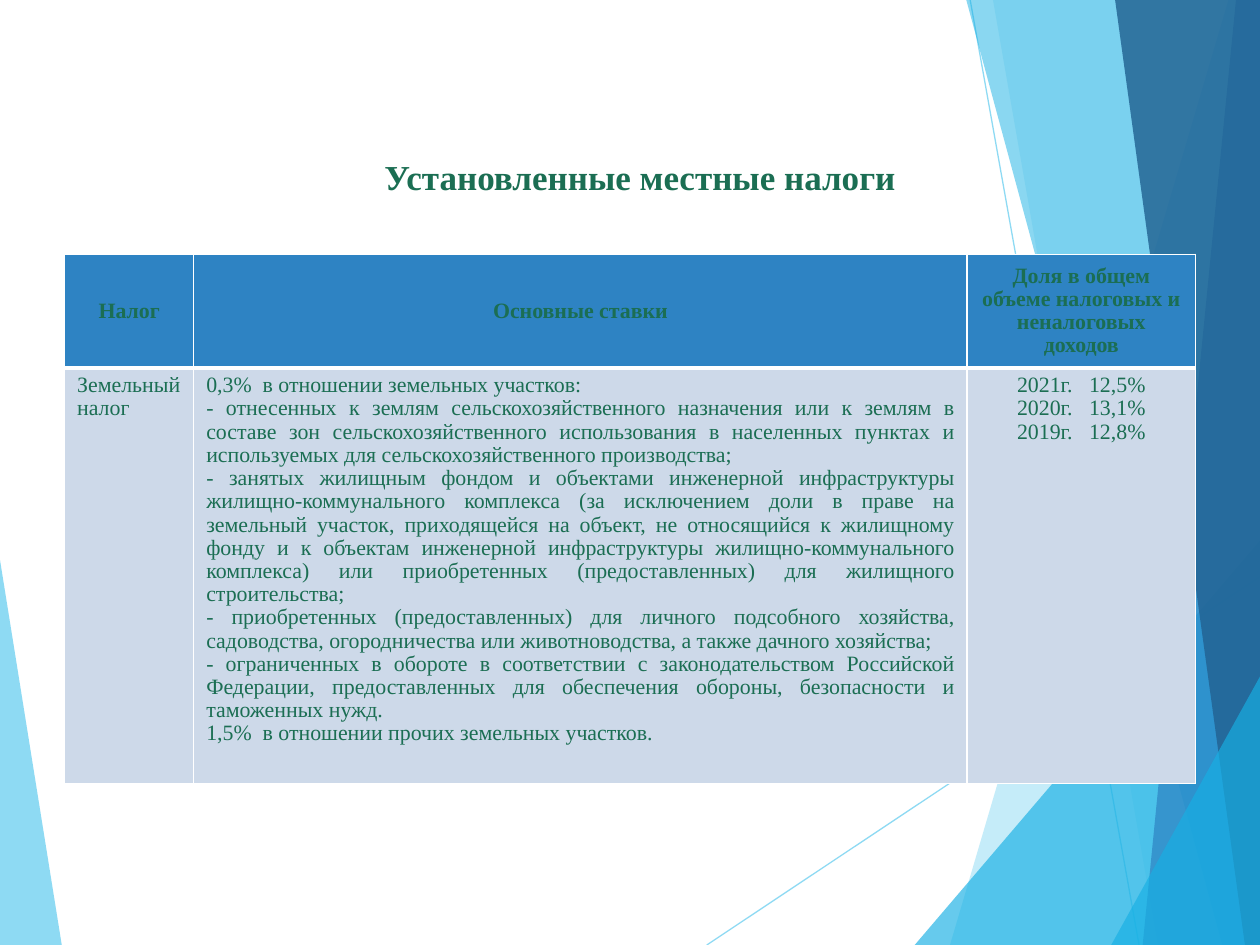
from lxml import etree
from pptx import Presentation
from pptx.dml.color import RGBColor
from pptx.enum import shapes, text
from pptx.oxml import ns
from pptx.util import Pt

COLORS = {
    "sky": "5FCBEF", "cyan": "17B0E4", "blue": "2E83C3", "navy": "226292",
    "green": "1B6E53", "pale": "CDD9E9", "white": "FFFFFF",
}
FONT = "Times New Roman"
WIDTH, HEIGHT = 720, 540

# Each facet: colour, opacity in percent, corner points
LEFT_FACETS = [("sky", 70, [(0, 320), (35.3, 540), (0, 540)])]
RIGHT_FACETS = [
    ("sky", 36, [(702, 0), (542.9, 540), (720, 540), (720, 0)]),
    ("sky", 20, [(567.4, 0), (661.7, 540), (720, 540), (720, 0)]),
    ("cyan", 66, [(522.7, 540), (720, 308.9), (720, 540)]),
    ("cyan", 50, [(552.2, 0), (698.4, 540), (720, 540), (720, 0)]),
    ("blue", 70, [(706.3, 0), (653, 540), (720, 540), (720, 0)]),
    ("navy", 82, [(637.2, 0), (711.4, 540), (720, 540), (720, 0)]),
    ("cyan", 66, [(635, 540), (720, 386.6), (720, 540)]),
]
RAYS = [((403.9, 540), (720, 329.5)), ((554.4, 0), (650.9, 540))]

HEADERS = ["Налог", "Основные ставки",
           "Доля в общем объеме налоговых и неналоговых доходов"]
RATES = [
    "0,3%  в отношении земельных участков:",
    "- отнесенных к землям сельскохозяйственного назначения или к землям в составе зон "
    "сельскохозяйственного использования в населенных пунктах и используемых для "
    "сельскохозяйственного производства;",
    "- занятых жилищным фондом и объектами инженерной инфраструктуры жилищно-коммунального "
    "комплекса (за исключением доли в праве на земельный участок, приходящейся на объект, "
    "не относящийся к жилищному фонду и к объектам инженерной инфраструктуры "
    "жилищно-коммунального комплекса) или приобретенных (предоставленных) для жилищного "
    "строительства;",
    "- приобретенных (предоставленных) для личного подсобного хозяйства, садоводства, "
    "огородничества или животноводства, а также дачного хозяйства;",
    "- ограниченных в обороте в соответствии с законодательством Российской Федерации, "
    "предоставленных для обеспечения обороны, безопасности и таможенных нужд.",
    "1,5%  в отношении прочих земельных участков.",
]
SHARES = ["2021г.   12,5%", "2020г.   13,1%", "2019г.   12,8%"]


def rgb(name):
    return RGBColor.from_string(COLORS[name])


def set_opacity(fill_parent, percent):
    color = fill_parent.find(".//" + ns.qn("a:srgbClr"))
    etree.SubElement(color, ns.qn("a:alpha"), val=str(percent * 1000))


def add_facets(slide, facets):
    for color, opacity, corners in facets:
        points = [(Pt(x), Pt(y)) for x, y in corners]
        builder = slide.shapes.build_freeform(*points[0], scale=1.0)
        builder.add_line_segments(points[1:], close=True)
        facet = builder.convert_to_shape()
        facet.shadow.inherit = False
        facet.line.fill.background()
        facet.fill.solid()
        facet.fill.fore_color.rgb = rgb(color)
        set_opacity(facet._element.spPr, opacity)


def add_rays(slide, rays):
    for start, end in rays:
        ray = slide.shapes.add_connector(
            shapes.MSO_CONNECTOR.STRAIGHT, *(Pt(v) for v in start + end))
        ray.line.width = Pt(0.75)
        ray.line.color.rgb = rgb("sky")
        properties = ray._element.spPr
        set_opacity(properties, 70)
        etree.SubElement(properties, ns.qn("a:effectLst"))


def write(frame, lines, aligns, size, bold=False, spacing=1.0):
    """Fill a text frame with one paragraph per line."""
    for index, (line, align) in enumerate(zip(lines, aligns)):
        paragraph = frame.add_paragraph() if index else frame.paragraphs[0]
        paragraph.alignment = align
        paragraph.line_spacing = spacing
        run = paragraph.add_run()
        run.text = line
        run.font.color.rgb = rgb("green")
        for key, value in {"name": FONT, "size": Pt(size), "bold": bold}.items():
            setattr(run.font, key, value)


def add_title(slide, left, top, width, height):
    frame = slide.shapes.add_textbox(*(Pt(v) for v in (left, top, width, height))).text_frame
    settings = {"word_wrap": True, "margin_top": Pt(6),
                "vertical_anchor": text.MSO_ANCHOR.TOP}
    for key, value in settings.items():
        setattr(frame, key, value)
    write(frame, ["Установленные местные налоги"], [text.PP_ALIGN.CENTER], 20, bold=True)


def set_borders(cell, widths):
    properties = cell._tc.get_or_add_tcPr()
    for position, (side, width) in enumerate(widths.items()):
        border = etree.Element(ns.qn(f"a:ln{side}"), w=str(Pt(width)))
        fill = etree.SubElement(border, ns.qn("a:solidFill"))
        etree.SubElement(fill, ns.qn("a:srgbClr"), val=COLORS["white"])
        properties.insert(position, border)


def add_tax_table(slide, left, top, column_widths, row_heights):
    table = slide.shapes.add_table(
        len(row_heights), len(column_widths), Pt(left), Pt(top),
        Pt(sum(column_widths)), Pt(sum(row_heights))).table
    for column, width in zip(table.columns, column_widths):
        column.width = Pt(width)
    for row, height in zip(table.rows, row_heights):
        row.height = Pt(height)

    align = text.PP_ALIGN
    body = [
        (["Земельный налог"], [align.LEFT]),
        (RATES, [align.LEFT] + [align.JUSTIFY] * (len(RATES) - 1)),
        (SHARES, [align.CENTER] * len(SHARES)),
    ]
    rows = [
        ([([header], [align.CENTER]) for header in HEADERS], "blue", True,
         text.MSO_ANCHOR.MIDDLE, {"L": 1, "R": 1, "T": 1, "B": 3}),
        (body, "pale", False, text.MSO_ANCHOR.TOP, {"L": 1, "R": 1, "B": 1}),
    ]
    for row, (contents, color, bold, anchor, borders) in zip(table.rows, rows):
        for cell, (lines, aligns) in zip(row.cells, contents):
            cell.fill.solid()
            cell.fill.fore_color.rgb = rgb(color)
            cell.vertical_anchor = anchor
            set_borders(cell, borders)
            write(cell.text_frame, lines, aligns, 12.5, bold, spacing=0.96)


def main():
    deck = Presentation()
    deck.slide_width, deck.slide_height = Pt(WIDTH), Pt(HEIGHT)
    slide = deck.slides.add_slide(deck.slide_layouts[6])
    add_facets(slide, LEFT_FACETS)
    add_rays(slide, RAYS)
    add_facets(slide, RIGHT_FACETS)
    add_title(slide, 99.4, 82.8, 532.8, 51)
    add_tax_table(slide, 36.9, 145.4, (73.8, 442, 130.4), (62.6, 228))
    deck.save("out.pptx")


if __name__ == "__main__":
    main()
